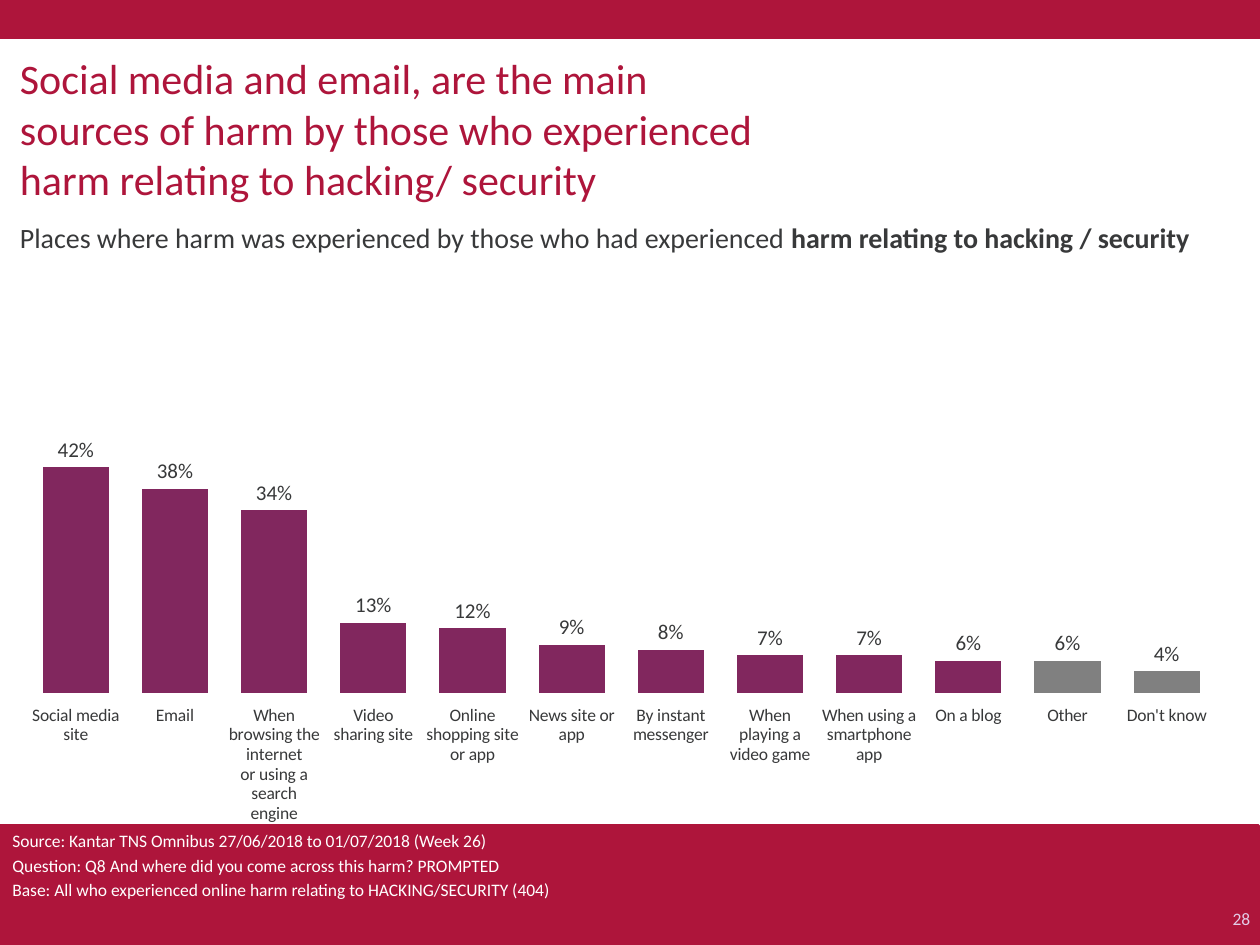
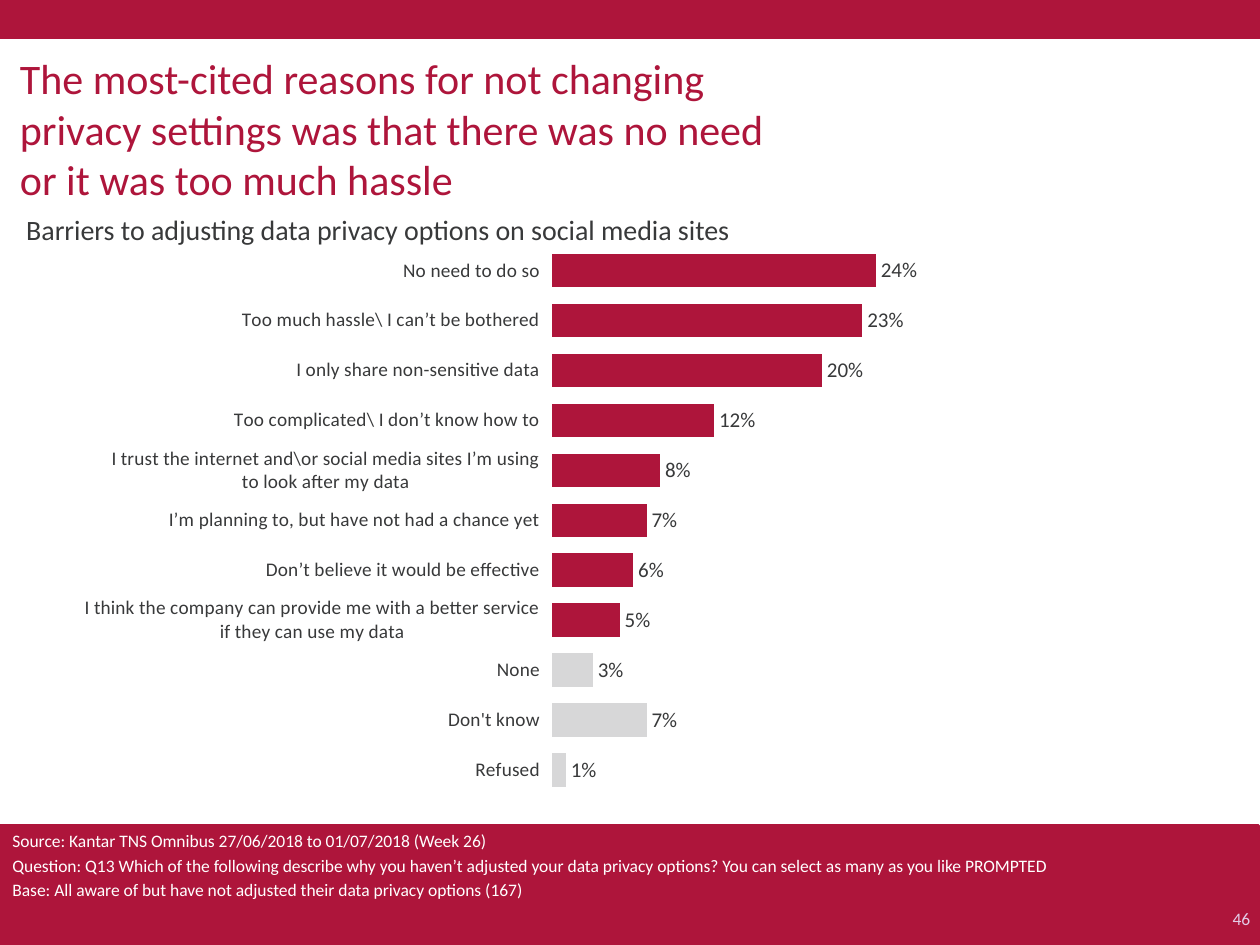
from dataclasses import dataclass

from pptx import Presentation
from pptx.chart.data import CategoryChartData
from pptx.dml.color import RGBColor
from pptx.enum.chart import XL_CHART_TYPE, XL_LABEL_POSITION
from pptx.enum.shapes import MSO_SHAPE
from pptx.enum.text import MSO_ANCHOR, PP_ALIGN
from pptx.oxml import parse_xml
from pptx.oxml.ns import nsdecls
from pptx.util import Inches, Pt

RECT = MSO_SHAPE.RECTANGLE
TOP = MSO_ANCHOR.TOP
LEFT, RIGHT = PP_ALIGN.LEFT, PP_ALIGN.RIGHT
COLUMN, BAR = XL_CHART_TYPE.COLUMN_CLUSTERED, XL_CHART_TYPE.BAR_CLUSTERED
OUTER = XL_LABEL_POSITION.OUTSIDE_END

# Grid: 100 columns by 75 rows on a 10 by 7.5 inch slide
COLS, ROWS = 100, 75
WIDE, HIGH = Inches(10), Inches(7.5)


@dataclass(frozen=True)
class Theme:
    font: str = "Calibri"
    red: str = "AE153B"
    plum: str = "81275E"
    ink: str = "38393A"
    white: str = "FFFFFF"
    lilac: str = "E3CCE7"
    grey: str = "808080"
    pale: str = "D7D7D8"
    title: int = 24
    head: int = 16
    value: int = 12
    label: int = 11
    small: int = 10


THEME = Theme()


def rgb(code):
    return RGBColor.from_string(code)


class Deck:
    def __init__(self, theme):
        self.theme = theme
        self.file = Presentation()
        self.file.slide_width, self.file.slide_height = WIDE, HIGH
        self.slide = None

    def place(self, col, row, cols, rows):
        """Turn grid units into slide lengths."""
        return (round(col * WIDE / COLS), round(row * HIGH / ROWS),
                round(cols * WIDE / COLS), round(rows * HIGH / ROWS))

    def style(self, font, size, color, bold=None):
        font.name, font.size, font.bold = self.theme.font, Pt(size), bold
        font.color.rgb = rgb(color)

    def words(self, frame, lines, size, color, align=LEFT):
        """Each line is a list of (text, bold) runs."""
        frame.word_wrap = True
        frame.vertical_anchor = TOP
        for i, line in enumerate(lines):
            para = frame.paragraphs[0] if i == 0 else frame.add_paragraph()
            para.alignment = align
            if i:
                para.space_before = Pt(size * 0.2)
            for text, bold in line:
                run = para.add_run()
                run.text = text
                self.style(run.font, size, color, bold)

    def text(self, spot, lines, size, color, align=LEFT):
        box = self.slide.shapes.add_textbox(*self.place(*spot))
        self.words(box.text_frame, lines, size, color, align)

    def block(self, spot, edge=None):
        shape = self.slide.shapes.add_shape(RECT, *self.place(*spot))
        shape.shadow.inherit = False
        shape.fill.solid()
        shape.fill.fore_color.rgb = rgb(self.theme.red)
        if edge:
            shape.line.color.rgb = rgb(self.theme.red)
            shape.line.width = Pt(edge)
        else:
            shape.line.fill.background()
        return shape

    def page(self, number, title, width, notes):
        """Start a slide with its bands, number, title and source notes."""
        look = self.theme
        self.slide = self.file.slides.add_slide(self.file.slide_layouts[6])
        self.block((0, 70.8, 100, 4.2))
        self.block((0, 0, 100, 3.1))
        self.block((94, 65.5, 5.9, 6), edge=1.5)
        self.text((0.6, 3.7, width, 7.7), [[(title, None)]],
                  look.title, look.red)
        foot = self.block((0, 65.4, 96.5, 9.6))
        self.words(foot.text_frame, [[(note, None)] for note in notes],
                   look.small, look.white)
        self.text((95.7, 71.6, 4.5, 2.8), [[(str(number), None)]],
                  look.small, look.lilac, RIGHT)

    def head(self, col, row, *runs):
        self.text((col, row, 98.9, 3.3), [runs],
                  self.theme.head, self.theme.ink)

    def chart(self, kind, spot, rows, color, dim, rest, top, size, inner):
        """Draw (label, percent) rows; the last `rest` bars are dimmed."""
        data = CategoryChartData(number_format="0%")
        data.categories = [name for name, _ in rows]
        data.add_series("Series 1", [share / 100 for _, share in rows])
        chart = self.slide.shapes.add_chart(
            kind, *self.place(*spot), data).chart
        chart.has_title = chart.has_legend = False
        self.style(chart.font, self.theme.value, self.theme.ink)

        # Axes
        cat, val = chart.category_axis, chart.value_axis
        cat.format.line.fill.background()
        cat.has_major_gridlines = val.has_major_gridlines = False
        cat.reverse_order = kind == BAR
        self.style(cat.tick_labels.font, size, self.theme.ink)
        val.minimum_scale, val.maximum_scale = 0, top
        val.visible = False

        # Bars and their labels
        plot = chart.plots[0]
        plot.gap_width = 50
        plot.vary_by_categories = False
        bars = plot.series[0]
        bars.invert_if_negative = False
        bars.format.fill.solid()
        bars.format.fill.fore_color.rgb = rgb(color)
        for i in range(len(rows) - rest, len(rows)):
            fill = bars.points[i].format.fill
            fill.solid()
            fill.fore_color.rgb = rgb(dim)
        tags = bars.data_labels
        tags.show_value = True
        tags.position = OUTER
        tags.number_format, tags.number_format_is_linked = "0%", False
        self.style(tags.font, self.theme.value, self.theme.ink)

        # Fixed plot area, in percent of the chart
        area = chart.element.xpath("c:chart/c:plotArea")[0]
        for old in area.xpath("c:layout"):
            area.remove(old)
        sides = "".join(f'<c:{key} val="{share / 100:.3f}"/>'
                        for key, share in zip("xywh", inner))
        area.insert(0, parse_xml(
            f'<c:layout {nsdecls("c")}><c:manualLayout>'
            '<c:layoutTarget val="inner"/><c:xMode val="edge"/>'
            f'<c:yMode val="edge"/>{sides}</c:manualLayout></c:layout>'))


SOURCE = "Source: Kantar TNS Omnibus 27/06/2018 to 01/07/2018 (Week 26)"

PLACES = [
    ("Social media site", 42),
    ("Email", 38),
    ("When browsing the internet\nor using a search engine", 34),
    ("Video sharing site", 13),
    ("Online shopping site or app", 12),
    ("News site or app", 9),
    ("By instant messenger", 8),
    ("When playing a video game", 7),
    ("When using a smartphone app", 7),
    ("On a blog", 6),
    ("Other", 6),
    ("Don't know", 4),
]

REASONS = [
    ("No need to do so", 24),
    ("Too much hassle\\ I can’t be bothered", 23),
    ("I only share non-sensitive data", 20),
    ("Too complicated\\ I don’t know how to", 12),
    ("I trust the internet and\\or social media sites I’m using\n"
     "to look after my data", 8),
    ("I’m planning to, but have not had a chance yet", 7),
    ("Don’t believe it would be effective", 6),
    ("I think the company can provide me with a better service\n"
     "if they can use my data", 5),
    ("None", 3),
    ("Don't know", 7),
    ("Refused", 1),
]


def main():
    deck = Deck(THEME)

    # Sources of harm
    deck.page(28, "Social media and email, are the main sources of harm by "
              "those who experienced harm relating to hacking/ security", 62.8,
              [SOURCE,
               "Question: Q8 And where did you come across this harm? PROMPTED",
               "Base: All who experienced online harm relating to "
               "HACKING/SECURITY (404)"])
    deck.head(0.6, 17, ("Places where harm was experienced by those who had "
                        "experienced ", None),
              ("harm relating to hacking / security", True))
    deck.chart(COLUMN, (0.4, 18.6, 98.8, 46.8), PLACES, THEME.plum,
               THEME.grey, rest=2, top=0.8, size=THEME.small,
               inner=(1.7, 4.9, 95.6, 72.9))

    # Barriers to privacy options
    deck.page(46, "The most-cited reasons for not changing privacy settings "
              "was that there was no need or it was too much hassle", 64.4,
              [SOURCE,
               "Question: Q13 Which of the following describe why you haven’t "
               "adjusted your data privacy options? You can select as many as "
               "you like PROMPTED",
               "Base: All aware of but have not adjusted their data privacy "
               "options (167)"])
    deck.head(1.1, 16.4, ("Barriers to adjusting data privacy options on "
                          "social media sites", None))
    deck.chart(BAR, (-15.9, 18, 113.8, 45.1), REASONS, THEME.red,
               THEME.pale, rest=3, top=0.5, size=THEME.label,
               inner=(52.5, 3.3, 47, 96.7))

    deck.file.save("out.pptx")


if __name__ == "__main__":
    main()
